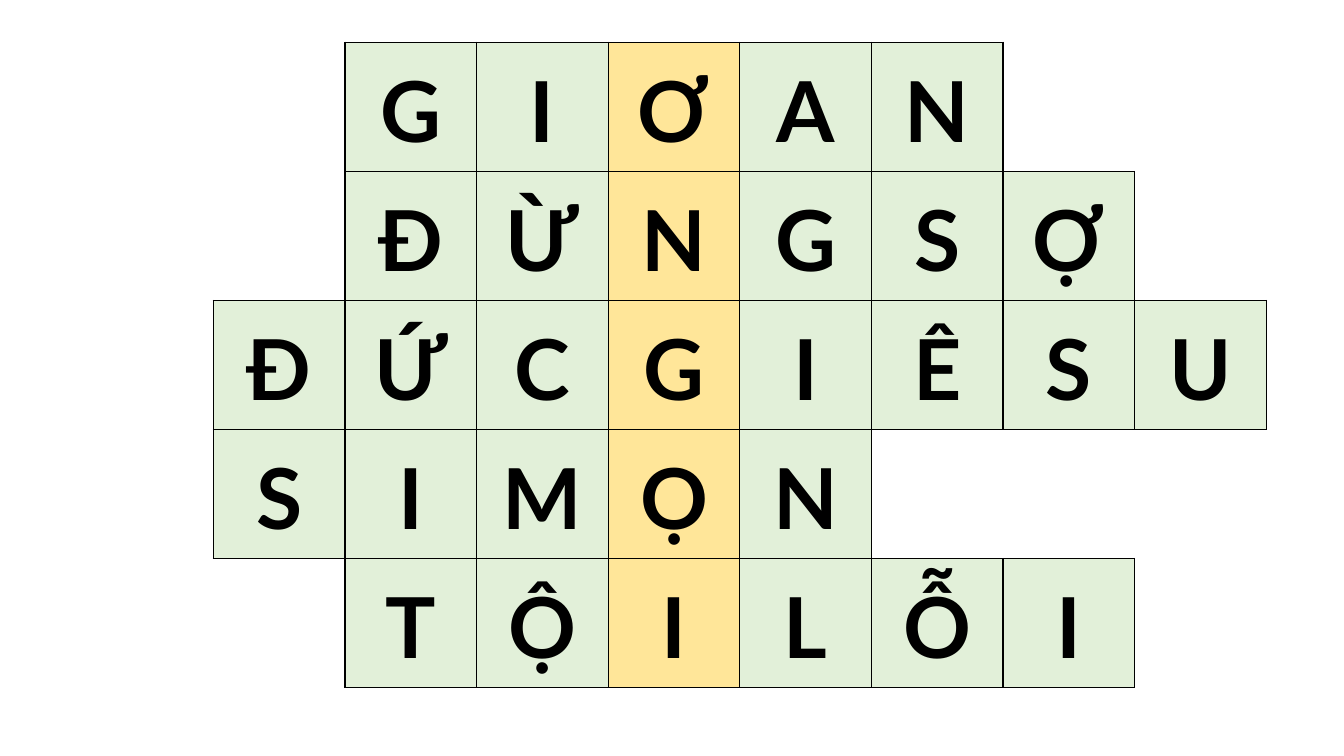
from dataclasses import dataclass

from lxml.etree import SubElement as Sub
from pptx import Presentation
from pptx.dml.color import RGBColor as Rgb
from pptx.enum.text import MSO_ANCHOR as Anchor, PP_ALIGN as Align
from pptx.oxml.ns import qn
from pptx.table import Table, _Cell as Cell
from pptx.util import Inches, Pt

HUES = {"ink": "000000", "leaf": "E2F0D9", "key": "FFE699"}
FONT = "Lato"

# Grid: one column and one row of the puzzle, in inches
LEFT, TOP = 0.81, 0.42
COLS, COL, ROW = 9, 11.75 / 9, 1.28
KEY = 4  # column that spells the hidden word
SIDES = {"L": (0, -1), "R": (0, 1), "T": (-1, 0), "B": (1, 0)}


@dataclass(frozen=True)
class Word:
    start: int
    text: str


WORDS = [
    Word(2, "GIƠAN"),
    Word(2, "ĐỪNGSỢ"),
    Word(1, "ĐỨCGIÊSU"),
    Word(1, "SIMỌN"),
    Word(2, "TỘILỖI"),
]


def letter(row: int, col: int) -> str:
    """Give the letter at a grid place, or nothing outside a word."""
    if not 0 <= row < len(WORDS):
        return ""
    word = WORDS[row]
    spot = col - word.start
    return word.text[spot] if 0 <= spot < len(word.text) else ""


def edge(cell: Cell, side: str, seen: bool) -> None:
    line = Sub(cell._tc.get_or_add_tcPr(), qn(f"a:ln{side}"), w=str(Pt(1)))
    if seen:
        fill = Sub(line, qn("a:solidFill"))
        Sub(fill, qn("a:srgbClr"), val=HUES["ink"])
    else:
        Sub(line, qn("a:noFill"))


def write(cell: Cell, text: str) -> None:
    cell.vertical_anchor = Anchor.MIDDLE
    cell.margin_left = cell.margin_right = Inches(0.07)
    cell.margin_top = cell.margin_bottom = 0
    para = cell.text_frame.paragraphs[0]
    para.alignment = Align.CENTER
    para.line_spacing = 1.07
    para.space_after = Pt(8)
    run = para.add_run()
    run.text = text
    run.font.name = FONT
    run.font.size = Pt(60)
    run.font.bold = True
    run.font.color.rgb = Rgb.from_string(HUES["ink"])


def draw(table: Table, row: int, col: int) -> None:
    cell = table.cell(row, col)
    text = letter(row, col)
    # An edge shows where it touches a letter on either side
    for side, (down, right) in SIDES.items():
        edge(cell, side, bool(text or letter(row + down, col + right)))
    if not text:
        cell.fill.background()
        return
    cell.fill.solid()
    hue = "key" if col == KEY else "leaf"
    cell.fill.fore_color.rgb = Rgb.from_string(HUES[hue])
    write(cell, text)


def main() -> None:
    deck = Presentation()
    deck.slide_width, deck.slide_height = Inches(13.33), Inches(7.5)
    slide = deck.slides.add_slide(deck.slide_layouts[6])

    # Crossword table
    rows = len(WORDS)
    frame = slide.shapes.add_table(
        rows, COLS, Inches(LEFT), Inches(TOP),
        Inches(COLS * COL), Inches(rows * ROW))
    table = frame.table
    table.first_row = table.horz_banding = False
    for row in range(rows):
        for col in range(COLS):
            draw(table, row, col)

    deck.save("out.pptx")


if __name__ == "__main__":
    main()
